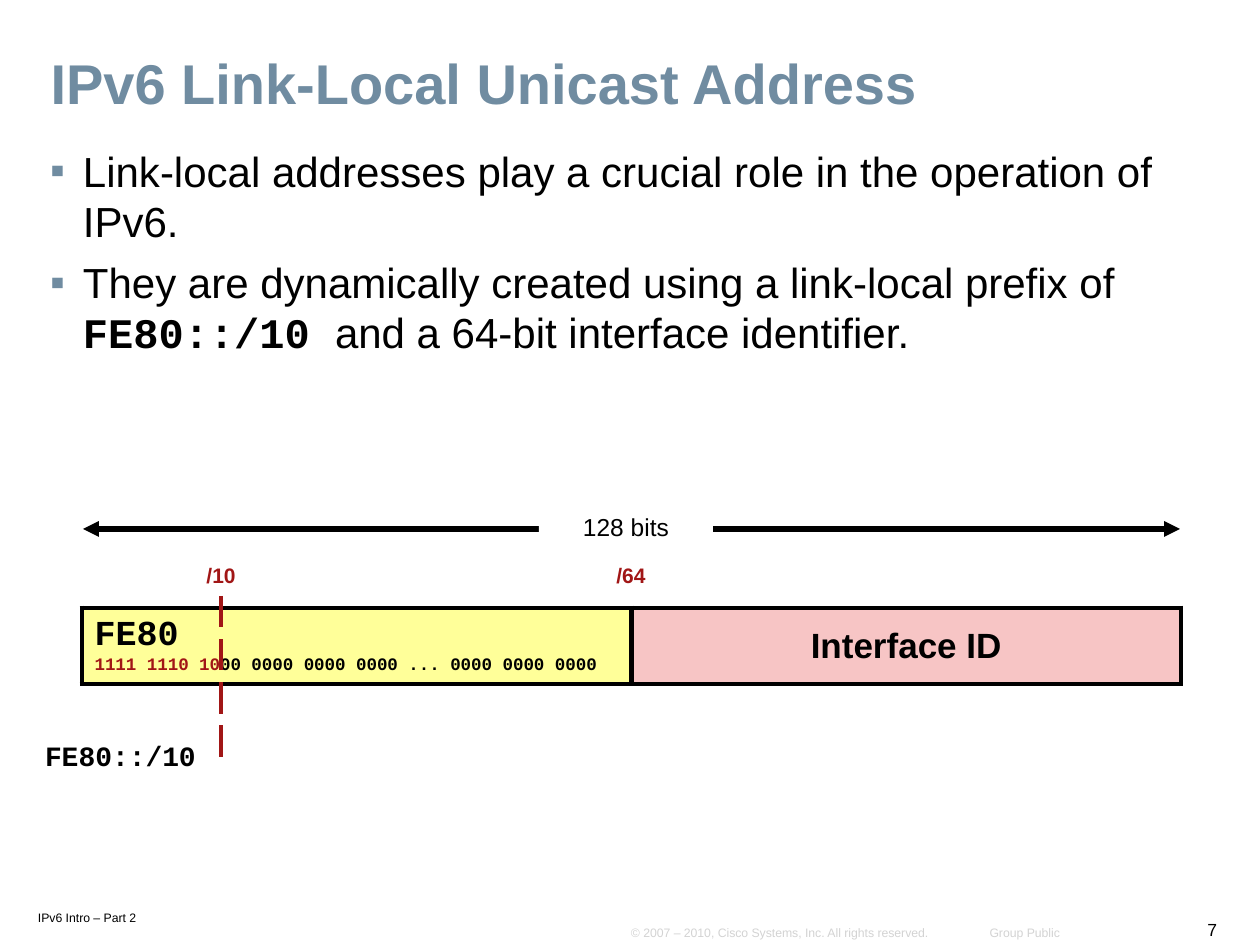
from dataclasses import dataclass

from lxml import etree
from pptx import Presentation
from pptx import util as u
from pptx.dml.color import RGBColor
from pptx.enum import dml, shapes, text
from pptx.oxml.ns import qn

SCALE = 914400 / 126  # EMU in one px


@dataclass(frozen=True)
class Theme:
    sans: str = "Arial"
    mono: str = "Courier New"
    ink: str = "000000"
    accent: str = "708CA1"
    prefix: str = "A11616"
    muted: str = "D3D3D3"
    paper: str = "FFFFFF"
    network_fill: str = "FFFF99"
    interface_fill: str = "F7C5C5"
    title: int = 32
    body: int = 24
    field: int = 20
    address: int = 16
    width: int = 14
    mark: int = 12
    bits: int = 10
    page: int = 10
    footer: int = 7
    rule: float = 3
    dash: float = 2.25


THEME = Theme()
LEFT, CENTER, RIGHT = (text.PP_ALIGN.LEFT, text.PP_ALIGN.CENTER,
                       text.PP_ALIGN.RIGHT)


def px(*lengths):
    return [u.Emu(round(length * SCALE)) for length in lengths]


def rgb(color):
    return RGBColor.from_string(color)


def style(paragraph, size, color=THEME.ink, face=THEME.sans, bold=False,
          align=LEFT, spacing=1.0):
    paragraph.alignment = align
    paragraph.line_spacing = spacing
    font = paragraph.font
    font.name, font.size, font.bold = face, u.Pt(size), bold
    font.color.rgb = rgb(color)


def place(shape, box):
    shape.left, shape.top, shape.width, shape.height = px(*box)


def set_insets(frame, horizontal, vertical):
    frame.margin_left, frame.margin_right = px(horizontal, horizontal)
    frame.margin_top, frame.margin_bottom = px(vertical, vertical)


def add_title(slide, wording):
    title = slide.shapes.title
    place(title, (38, 48, 1174, 76))
    frame = title.text_frame
    frame.text = wording
    frame.auto_size = text.MSO_AUTO_SIZE.NONE
    frame.vertical_anchor = text.MSO_ANCHOR.MIDDLE
    style(frame.paragraphs[0], THEME.title, THEME.accent, bold=True, spacing=0.9)


def add_bullet(paragraph):
    properties = paragraph._p.get_or_add_pPr()
    indent = px(33)[0]
    properties.set("marL", str(indent))
    properties.set("indent", str(-indent))
    color = etree.SubElement(properties, qn("a:buClr"))
    etree.SubElement(color, qn("a:srgbClr"), val=THEME.accent)
    etree.SubElement(properties, qn("a:buFont"), typeface=THEME.sans)
    etree.SubElement(properties, qn("a:buChar"), char="▪")


def add_body(slide, points):
    """Each point is a list of (wording, is_code) pieces."""
    body = slide.placeholders[1]
    place(body, (39, 140, 1174, 751))
    frame = body.text_frame
    frame.auto_size = text.MSO_AUTO_SIZE.NONE
    frame.vertical_anchor = text.MSO_ANCHOR.TOP
    set_insets(frame, 11, 5)
    for index, pieces in enumerate(points):
        point = frame.add_paragraph() if index else frame.paragraphs[0]
        point.line_spacing = 1.0
        point.space_before, point.space_after = u.Pt(0), u.Pt(6)
        add_bullet(point)
        style(point, THEME.body)
        for wording, is_code in pieces:
            run = point.add_run()
            run.text = wording
            if is_code:
                run.font.name, run.font.bold = THEME.mono, True


def add_label(slide, wording, box, size, anchor=text.MSO_ANCHOR.TOP,
              insets=(13, 6), **look):
    label = slide.shapes.add_textbox(*px(*box))
    frame = label.text_frame
    frame.text = wording
    frame.word_wrap = False
    frame.vertical_anchor = anchor
    set_insets(frame, *insets)
    style(frame.paragraphs[0], size, **look)


def add_footer(slide, wording, box, size=THEME.footer, **look):
    add_label(slide, wording, box, size, text.MSO_ANCHOR.BOTTOM, (11, 5), **look)


def add_line(slide, kind, ends, color, width):
    line = slide.shapes.add_connector(kind, *px(*ends))
    line.line.color.rgb = rgb(color)
    line.line.width = u.Pt(width)
    etree.SubElement(line._element.spPr, qn("a:effectLst"))
    return line


def add_width_arrow(slide, wording):
    arrow = add_line(slide, shapes.MSO_CONNECTOR.STRAIGHT, (83, 529, 1180, 529),
                     THEME.ink, THEME.rule)
    outline = arrow.line._get_or_add_ln()
    for end in ("a:headEnd", "a:tailEnd"):
        etree.SubElement(outline, qn(end), type="triangle")

    gap = slide.shapes.add_shape(shapes.MSO_SHAPE.RECTANGLE, *px(539, 505, 174, 43))
    gap.shadow.inherit = False
    gap.fill.solid()
    gap.fill.fore_color.rgb = rgb(THEME.paper)
    gap.line.fill.background()
    gap.text_frame.text = wording
    style(gap.text_frame.paragraphs[0], THEME.width, align=CENTER)


def add_prefix_boundary(slide):
    """Dashed elbow that runs down and then left, by a quarter turn."""
    elbow = add_line(slide, shapes.MSO_CONNECTOR.ELBOW, (135, 672, 297, 682),
                     THEME.prefix, THEME.dash)
    elbow.line.dash_style = dml.MSO_LINE.LONG_DASH
    properties = elbow._element.spPr
    properties.find(qn("a:prstGeom")).set("prst", "bentConnector2")
    properties.find(qn("a:xfrm")).set("rot", str(90 * 60000))


def format_cell(cell, fill):
    properties = cell._tc.get_or_add_tcPr()
    for side in "LRTB":
        border = etree.SubElement(properties, qn(f"a:ln{side}"),
                                  w=str(u.Pt(THEME.rule)))
        paint = etree.SubElement(border, qn("a:solidFill"))
        etree.SubElement(paint, qn("a:srgbClr"), val=THEME.ink)
    cell.fill.solid()
    cell.fill.fore_color.rgb = rgb(fill)
    cell.vertical_anchor = text.MSO_ANCHOR.MIDDLE


def add_address_table(slide):
    table = slide.shapes.add_table(1, 2, *px(82, 608, 1099, 76)).table
    table.first_row = table.horz_banding = False
    network, interface = table.cell(0, 0), table.cell(0, 1)
    format_cell(network, THEME.network_fill)
    format_cell(interface, THEME.interface_fill)

    network.text = "FE80"
    prefix = network.text_frame.paragraphs[0]
    prefix.space_after = u.Pt(2)
    style(prefix, THEME.field, face=THEME.mono, bold=True, spacing=0.9)
    bits = network.text_frame.add_paragraph()
    style(bits, THEME.bits, face=THEME.mono, bold=True)
    for wording, color in (("1111 1110 10", THEME.prefix),
                           ("00 0000 0000 0000 ... 0000 0000 0000", THEME.ink)):
        run = bits.add_run()
        run.text = wording
        run.font.color.rgb = rgb(color)

    interface.text = "Interface ID"
    style(interface.text_frame.paragraphs[0], THEME.field, bold=True, align=CENTER)


def main():
    deck = Presentation()
    deck.slide_width, deck.slide_height = px(1260, 945)
    slide = deck.slides.add_slide(deck.slide_layouts[1])

    add_footer(slide, "IPv6 Intro – Part 2", (27, 904, 132, 26))
    add_footer(slide, "7", (1184, 912, 44, 33), THEME.page, align=RIGHT)
    add_footer(slide, "© 2007 – 2010, Cisco Systems, Inc. All rights reserved.",
               (620, 919, 330, 26), color=THEME.muted)
    add_footer(slide, "Group Public", (971, 919, 100, 26),
               color=THEME.muted, align=RIGHT)

    add_title(slide, "IPv6 Link-Local Unicast Address")
    add_body(slide, [
        [("Link-local addresses play a crucial role in the operation of IPv6.",
          False)],
        [("They are dynamically created using a link-local prefix of", False),
         (" FE80::/10 ", True),
         ("and a 64-bit interface identifier.", False)],
    ])

    add_width_arrow(slide, "128 bits")
    add_address_table(slide)
    for wording, middle in (("/10", 221), ("/64", 631)):
        add_label(slide, wording, (middle - 35, 559, 70, 35), THEME.mark,
                  color=THEME.prefix, bold=True, align=CENTER, spacing=0.9)
    add_label(slide, "FE80::/10", (26, 736, 189, 43), THEME.address,
              face=THEME.mono, bold=True, align=CENTER, spacing=0.9)
    add_prefix_boundary(slide)

    deck.save("out.pptx")


if __name__ == "__main__":
    main()
